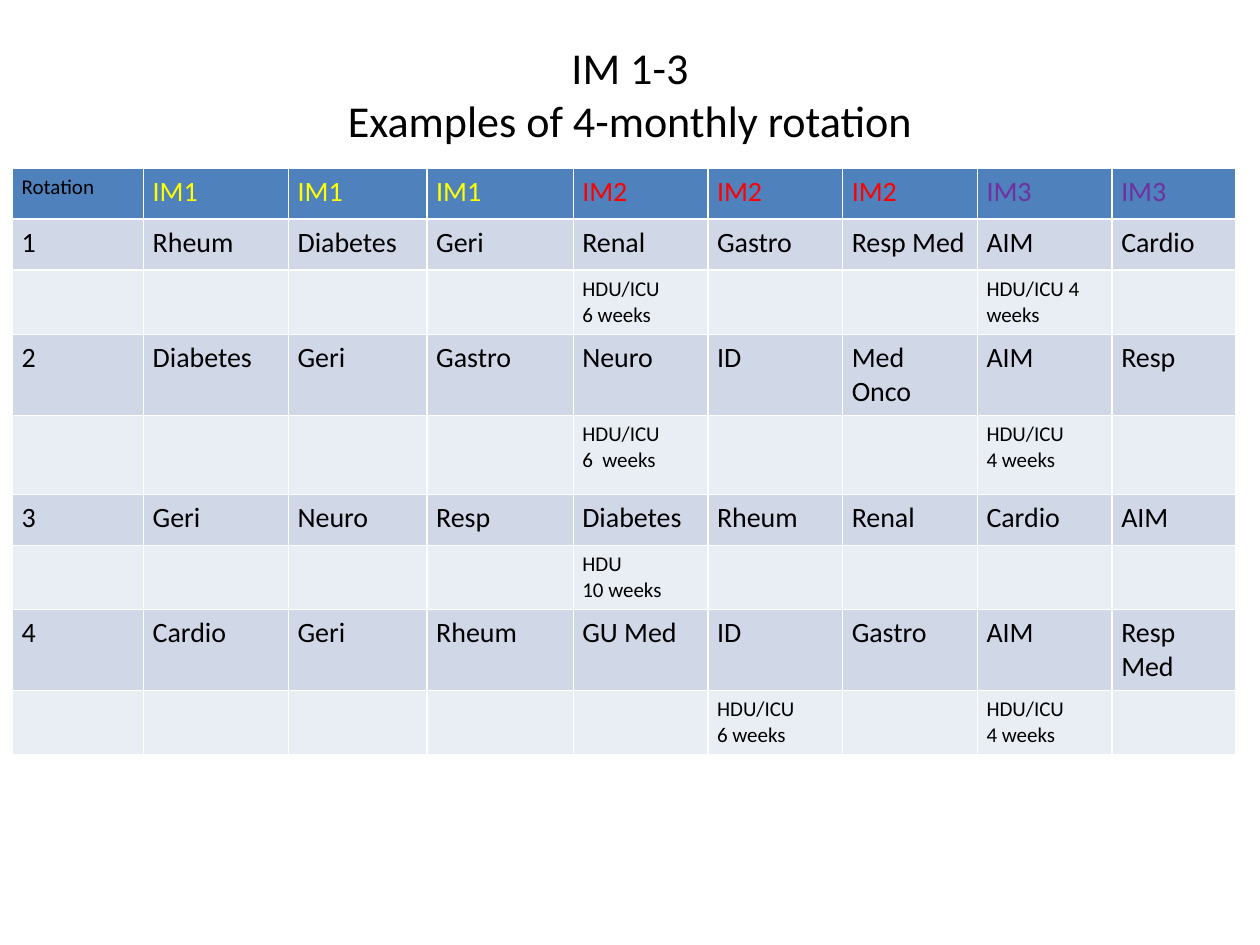
import pptx
import pptx.dml.color
import pptx.enum.text
import pptx.util

Pt = pptx.util.Pt
FONT = "Calibri"
COLORS = {
    "black": "000000",
    "header": "4F81BD",
    "rotation": "D0D8E8",
    "detail": "E9EDF4",
    "IM1": "FFFF00",
    "IM2": "FF0000",
    "IM3": "7030A0",
}
COL_WIDTHS = [74.9, 82.8, 79.2, 83.5, 77, 77, 77, 77, 70.6]
ROW_HEIGHTS = [29.2, 29.2, 36.6, 46.3, 45.2, 29.2, 36.6, 46.3, 36.6]
HEADER = ["Rotation"] + ["IM1"] * 3 + ["IM2"] * 3 + ["IM3"] * 2
ROTATIONS = [
    (["Rheum", "Diabetes", "Geri", "Renal", "Gastro", "Resp Med", "AIM", "Cardio"],
     {4: "HDU/ICU\n6 weeks", 7: "HDU/ICU 4 weeks"}),
    (["Diabetes", "Geri", "Gastro", "Neuro", "ID", "Med Onco", "AIM", "Resp"],
     {4: "HDU/ICU\n6  weeks", 7: "HDU/ICU\n4 weeks"}),
    (["Geri", "Neuro", "Resp", "Diabetes", "Rheum", "Renal", "Cardio", "AIM"],
     {4: "HDU\n10 weeks"}),
    (["Cardio", "Geri", "Rheum", "GU Med", "ID", "Gastro", "AIM", "Resp Med"],
     {5: "HDU/ICU\n6 weeks", 7: "HDU/ICU\n4 weeks"}),
]


def rgb(name):
    return pptx.dml.color.RGBColor.from_string(COLORS[name])


def set_font(p, size, color="black"):
    p.font.name = FONT
    p.font.size = Pt(size)
    p.font.bold = False
    p.font.color.rgb = rgb(color)


def add_title(slide, text):
    sp = slide.shapes.add_textbox(Pt(36), Pt(23), Pt(648), Pt(61.2))
    tf = sp.text_frame
    tf.word_wrap = True
    tf.vertical_anchor = pptx.enum.text.MSO_ANCHOR.MIDDLE
    p = tf.paragraphs[0]
    p.text = text
    p.alignment = pptx.enum.text.PP_ALIGN.CENTER
    set_font(p, 25.2)


def fill_cell(cell, text, size, fill, color="black"):
    cell.margin_left = cell.margin_right = Pt(5.2)
    cell.margin_top = cell.margin_bottom = Pt(3.6)
    cell.fill.solid()
    cell.fill.fore_color.rgb = rgb(fill)
    cell.text = text
    for p in cell.text_frame.paragraphs:
        set_font(p, size, color)


def add_rotation_table(slide):
    table = slide.shapes.add_table(
        len(ROW_HEIGHTS), len(COL_WIDTHS), Pt(7.2), Pt(96),
        Pt(sum(COL_WIDTHS)), Pt(sum(ROW_HEIGHTS))).table
    for col, width in zip(table.columns, COL_WIDTHS):
        col.width = Pt(width)
    for row, height in zip(table.rows, ROW_HEIGHTS):
        row.height = Pt(height)

    for c, label in enumerate(HEADER):
        size = 16 if c else 12
        fill_cell(table.cell(0, c), label, size, "header", label if c else "black")
    for n, (posts, details) in enumerate(ROTATIONS, start=1):
        for c, post in enumerate([str(n)] + posts):
            fill_cell(table.cell(2 * n - 1, c), post, 16, "rotation")
            fill_cell(table.cell(2 * n, c), details.get(c, ""), 12, "detail")


def main():
    prs = pptx.Presentation()
    prs.slide_width, prs.slide_height = Pt(720), Pt(540)
    slide = prs.slides.add_slide(prs.slide_layouts[6])
    add_title(slide, "IM 1-3\vExamples of 4-monthly rotation")
    add_rotation_table(slide)
    prs.save("out.pptx")


if __name__ == "__main__":
    main()
